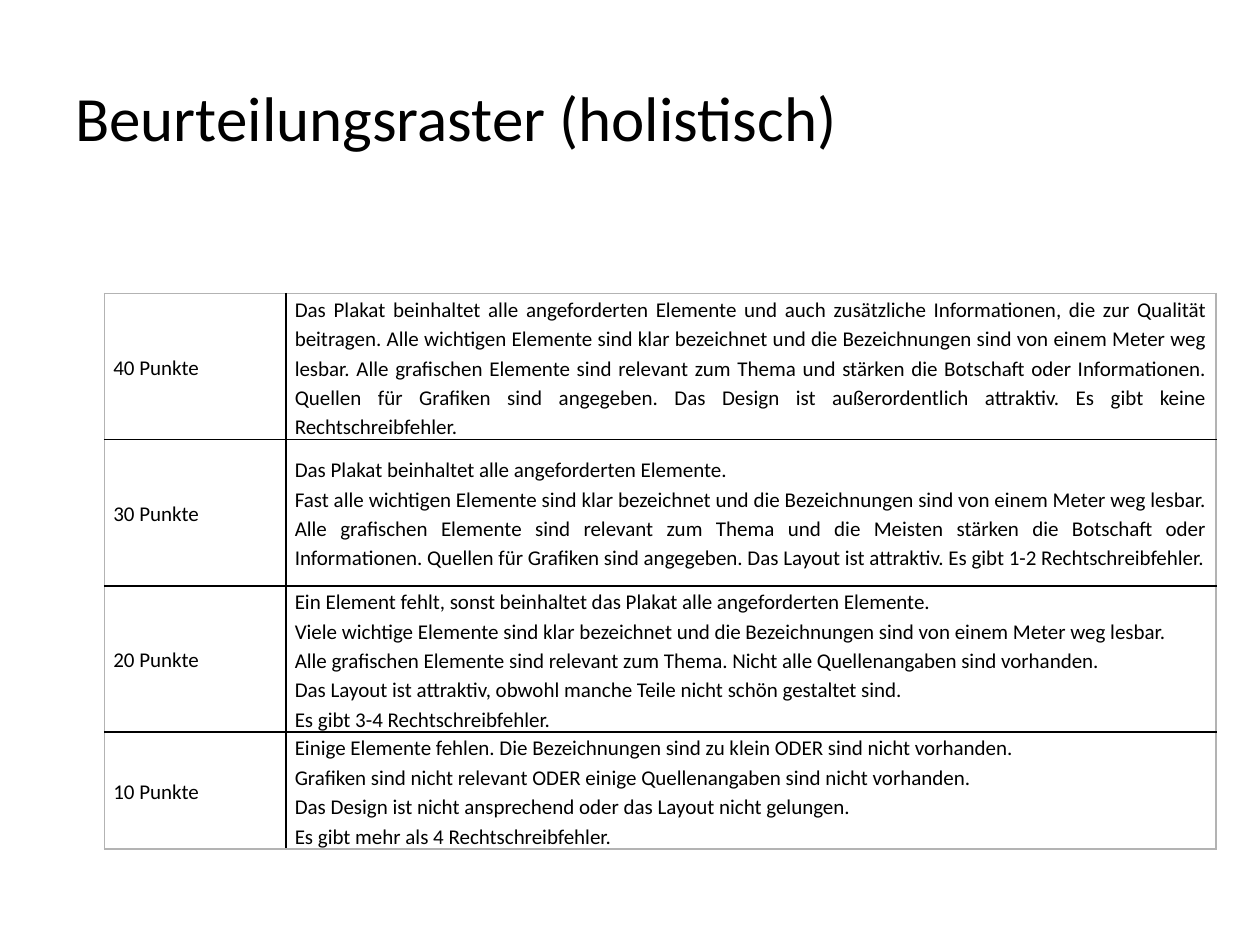
from lxml import etree
from pptx import Presentation
from pptx.dml.color import RGBColor
from pptx.enum.text import MSO_ANCHOR, PP_ALIGN
from pptx.oxml.ns import qn
from pptx.util import Inches, Pt

MIDDLE = MSO_ANCHOR.MIDDLE
JUSTIFY = PP_ALIGN.JUSTIFY
FONT = "Calibri"
COLORS = {"text": "000000", "grid": "000000", "frame": "B3B3B3"}
COLS = (1.44, 7.38)
ROWS = (1.16, 1.16, 1.16, 0.93)
LEVELS = [
    ("40 Punkte", [
        "Das Plakat beinhaltet alle angeforderten Elemente und auch zusätzliche "
        "Informationen, die zur Qualität beitragen. Alle wichtigen Elemente sind klar "
        "bezeichnet und die Bezeichnungen sind von einem Meter weg lesbar. Alle "
        "grafischen Elemente sind relevant zum Thema und stärken die Botschaft oder "
        "Informationen. Quellen für Grafiken sind angegeben. Das Design ist "
        "außerordentlich attraktiv. Es gibt keine Rechtschreibfehler.",
    ]),
    ("30 Punkte", [
        "Das Plakat beinhaltet alle angeforderten Elemente.",
        "Fast alle wichtigen Elemente sind klar bezeichnet und die Bezeichnungen sind "
        "von einem Meter weg lesbar. Alle grafischen Elemente sind relevant zum Thema "
        "und die Meisten stärken die Botschaft oder Informationen. Quellen für "
        "Grafiken sind angegeben. Das Layout ist attraktiv. Es gibt 1-2 "
        "Rechtschreibfehler.",
    ]),
    ("20 Punkte", [
        "Ein Element fehlt, sonst beinhaltet das Plakat alle angeforderten Elemente.",
        "Viele wichtige Elemente sind klar bezeichnet und die Bezeichnungen sind von "
        "einem Meter weg lesbar.",
        "Alle grafischen Elemente sind relevant zum Thema. Nicht alle Quellenangaben "
        "sind vorhanden.",
        "Das Layout ist attraktiv, obwohl manche Teile nicht schön gestaltet sind.",
        "Es gibt 3-4 Rechtschreibfehler.",
    ]),
    ("10 Punkte", [
        "Einige Elemente fehlen. Die Bezeichnungen sind zu klein ODER sind nicht "
        "vorhanden.",
        "Grafiken sind nicht relevant ODER einige Quellenangaben sind nicht vorhanden.",
        "Das Design ist nicht ansprechend oder das Layout nicht gelungen.",
        "Es gibt mehr als 4 Rechtschreibfehler.",
    ]),
]


def style(para, size):
    """Set the font of a paragraph."""
    para.font.name = FONT
    para.font.size = Pt(size)
    para.font.color.rgb = RGBColor.from_string(COLORS["text"])


def border(cell, edges):
    """Draw the cell's borders, grey where they lie on the table's edge."""
    props = cell._tc.get_or_add_tcPr()
    for side, outer in edges.items():
        line = etree.SubElement(props, qn(f"a:ln{side}"), w=str(Pt(1)))
        fill = etree.SubElement(line, qn("a:solidFill"))
        color = COLORS["frame" if outer else "grid"]
        etree.SubElement(fill, qn("a:srgbClr"), val=color)


def fill_cell(cell, lines):
    """Write justified lines into a cell."""
    cell.fill.background()
    cell.vertical_anchor = MIDDLE
    cell.margin_left = cell.margin_right = Inches(0.07)
    cell.margin_top = cell.margin_bottom = 0
    cell.text = "\n".join(lines)
    for para in cell.text_frame.paragraphs:
        para.alignment = JUSTIFY
        para.line_spacing = 1.15
        style(para, 12)


def add_title(slide, left, top, width, height):
    """Place the slide title in its box."""
    box = slide.shapes.add_textbox(left, top, width, height)
    frame = box.text_frame
    frame.word_wrap = True
    frame.vertical_anchor = MIDDLE
    para = frame.paragraphs[0]
    para.text = "Beurteilungsraster (holistisch)"
    style(para, 36)


def add_rubric(slide, left, top):
    """Place the table of levels and their criteria."""
    width, height = Inches(sum(COLS)), Inches(sum(ROWS))
    shape = slide.shapes.add_table(len(ROWS), len(COLS), left, top, width, height)
    table = shape.table
    table.first_row = table.horz_banding = False
    for col, size in zip(table.columns, COLS):
        col.width = Inches(size)
    for r, (points, lines) in enumerate(LEVELS):
        table.rows[r].height = Inches(ROWS[r])
        for c, texts in enumerate(([points], lines)):
            cell = table.cell(r, c)
            border(cell, {"L": c == 0, "R": c == len(COLS) - 1,
                          "T": r == 0, "B": r == len(ROWS) - 1})
            fill_cell(cell, texts)


def main():
    """Build and save the slide."""
    deck = Presentation()
    deck.slide_width, deck.slide_height = Inches(10), Inches(7.5)
    slide = deck.slides.add_slide(deck.slide_layouts[6])
    add_title(slide, Inches(0.5), Inches(0.3), Inches(7.18), Inches(1.25))
    add_rubric(slide, Inches(0.83), Inches(2.33))
    deck.save("out.pptx")


if __name__ == "__main__":
    main()
